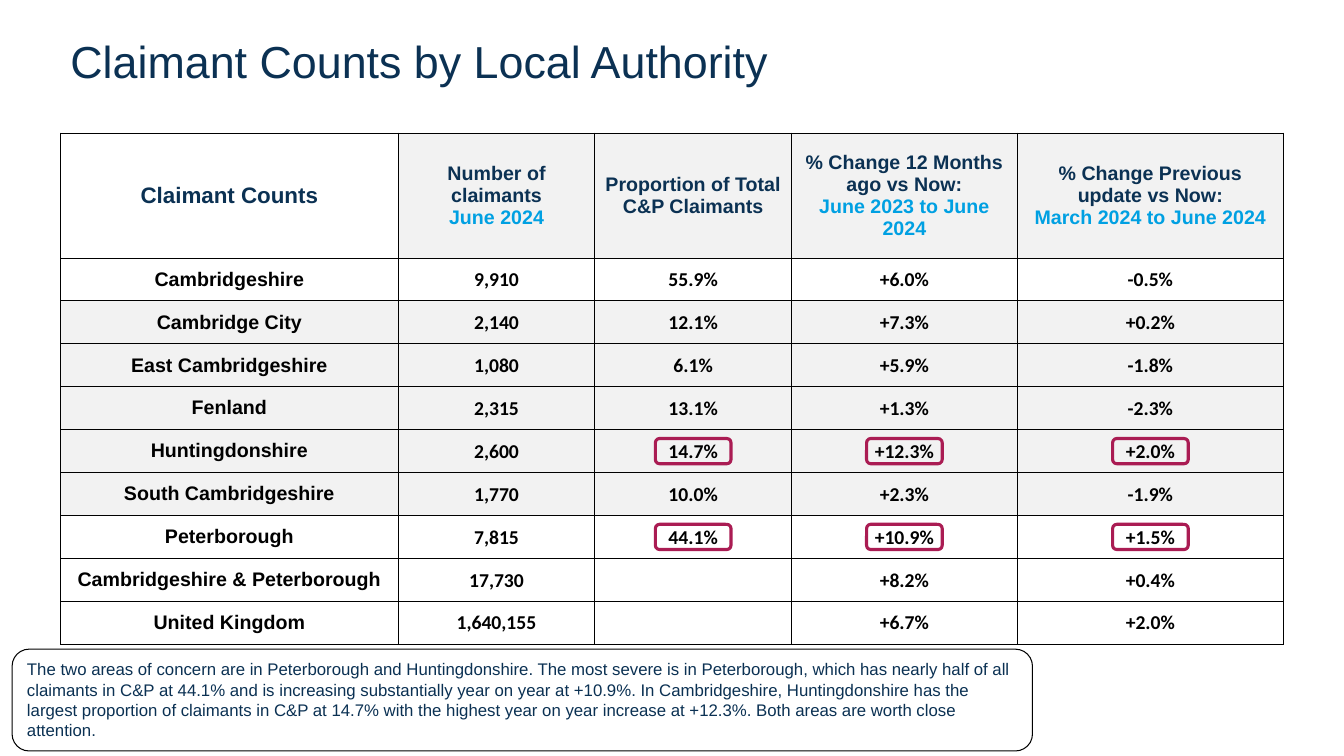
from itertools import product
from typing import NamedTuple

import pptx
import pptx.dml.color
import pptx.enum.shapes
import pptx.enum.text
import pptx.oxml
import pptx.oxml.ns
import pptx.util

COLOURS = {"navy": "0B3153", "sky": "00A0E2", "black": "000000",
           "band": "F2F2F2", "highlight": "AA1C53"}
SLIDE_WIDTH, SLIDE_HEIGHT = 13.33, 7.5
MARGIN, TABLE_TOP = 0.6, 1.32
COLUMNS = [3.35, 1.95, 1.95, 2.24, 2.64]
ROWS = [1.24] + [0.4256] * 9
HIGHLIGHT_WIDTH, HIGHLIGHT_HEIGHT = 0.75, 0.25


class Box(NamedTuple):
    left: float
    top: float
    width: float
    height: float

    def emu(self) -> list[int]:
        return [pptx.util.Inches(length) for length in self]


class Heading(NamedTuple):
    label: str
    period: str = ""
    size: int = 14
    shaded: bool = True


class Area(NamedTuple):
    name: str
    figures: tuple[str, str, str, str]
    is_district: bool = False
    of_concern: bool = False


HEADINGS = [
    Heading("Claimant Counts", size=16, shaded=False),
    Heading("Number of claimants", "June 2024"),
    Heading("Proportion of Total C&P Claimants"),
    Heading("% Change 12 Months ago vs Now:", "June 2023 to June 2024"),
    Heading("% Change Previous update vs Now:", "March 2024 to June 2024"),
]
AREAS = [
    Area("Cambridgeshire", ("9,910", "55.9%", "+6.0%", "-0.5%")),
    Area("Cambridge City", ("2,140", "12.1%", "+7.3%", "+0.2%"), True),
    Area("East Cambridgeshire", ("1,080", "6.1%", "+5.9%", "-1.8%"), True),
    Area("Fenland", ("2,315", "13.1%", "+1.3%", "-2.3%"), True),
    Area("Huntingdonshire", ("2,600", "14.7%", "+12.3%", "+2.0%"), True, True),
    Area("South Cambridgeshire", ("1,770", "10.0%", "+2.3%", "-1.9%"), True),
    Area("Peterborough", ("7,815", "44.1%", "+10.9%", "+1.5%"), of_concern=True),
    Area("Cambridgeshire & Peterborough", ("17,730", "", "+8.2%", "+0.4%")),
    Area("United Kingdom", ("1,640,155", "", "+6.7%", "+2.0%")),
]
SUMMARY = (
    "The two areas of concern are in Peterborough and Huntingdonshire. The most severe "
    "is in Peterborough, which has nearly half of all claimants in C&P at 44.1% and is "
    "increasing substantially year on year at +10.9%. In Cambridgeshire, Huntingdonshire "
    "has the largest proportion of claimants in C&P at 14.7% with the highest year on "
    "year increase at +12.3%. Both areas are worth close attention."
)


def rgb(colour: str) -> pptx.dml.color.RGBColor:
    return pptx.dml.color.RGBColor.from_string(COLOURS[colour])


def add_run(paragraph, text: str, size: int, colour: str,
            font: str = "Arial", bold: bool = False) -> None:
    run = paragraph.add_run()
    run.text = text
    run.font.size = pptx.util.Pt(size)
    run.font.name = font
    run.font.bold = bold
    run.font.color.rgb = rgb(colour)


def style_cell(cell, shaded: bool) -> None:
    """Give a cell thin black borders, middle anchoring and its band fill."""
    cell.vertical_anchor = pptx.enum.text.MSO_ANCHOR.MIDDLE
    properties = cell._tc.get_or_add_tcPr()
    for side in ("lnL", "lnR", "lnT", "lnB"):
        properties.append(pptx.oxml.parse_xml(
            f'<a:{side} {pptx.oxml.ns.nsdecls("a")} w="{pptx.util.Pt(0.75)}"><a:solidFill>'
            f'<a:srgbClr val="{COLOURS["black"]}"/></a:solidFill></a:{side}>'))
    if shaded:
        cell.fill.solid()
        cell.fill.fore_color.rgb = rgb("band")
    else:
        cell.fill.background()


def write_cell(cell, lines: list[tuple[str, str]], size: int = 14,
               font: str = "Arial") -> None:
    """Write (text, colour) lines as bold centred paragraphs."""
    frame = cell.text_frame
    for index, (text, colour) in enumerate(lines):
        paragraph = frame.add_paragraph() if index else frame.paragraphs[0]
        paragraph.alignment = pptx.enum.text.PP_ALIGN.CENTER
        add_run(paragraph, text, size, colour, font, bold=True)


def add_title(slide) -> None:
    box = Box(MARGIN, 0.25, sum(COLUMNS), 0.71)
    frame = slide.shapes.add_textbox(*box.emu()).text_frame
    frame.word_wrap = True
    frame.vertical_anchor = pptx.enum.text.MSO_ANCHOR.MIDDLE
    add_run(frame.paragraphs[0], "Claimant Counts by Local Authority", 32, "navy")


def add_claimant_table(slide) -> None:
    box = Box(MARGIN, TABLE_TOP, sum(COLUMNS), sum(ROWS))
    table = slide.shapes.add_table(len(ROWS), len(COLUMNS), *box.emu()).table
    table.first_row = table.horz_banding = False
    for column, width in zip(table.columns, COLUMNS):
        column.width = pptx.util.Inches(width)
    for row, height in zip(table.rows, ROWS):
        row.height = pptx.util.Inches(height)

    for column, heading in enumerate(HEADINGS):
        cell = table.cell(0, column)
        style_cell(cell, heading.shaded)
        lines = [(heading.label, "navy")]
        if heading.period:
            lines.append((heading.period, "sky"))
        write_cell(cell, lines, heading.size)

    for row, area in enumerate(AREAS, start=1):
        name_cell = table.cell(row, 0)
        style_cell(name_cell, area.is_district)
        write_cell(name_cell, [(area.name, "black")])
        for column, figure in enumerate(area.figures, start=1):
            cell = table.cell(row, column)
            style_cell(cell, area.is_district)
            cell.margin_left = cell.margin_right = cell.margin_top = pptx.util.Inches(0.01)
            cell.margin_bottom = 0
            if figure:
                write_cell(cell, [(figure, "black")], font="Calibri")


def add_rounded_outline(slide, box: Box, colour: str, weight: float):
    outline = slide.shapes.add_shape(
        pptx.enum.shapes.MSO_SHAPE.ROUNDED_RECTANGLE, *box.emu())
    outline.shadow.inherit = False
    outline.fill.background()
    outline.line.color.rgb = rgb(colour)
    outline.line.width = pptx.util.Pt(weight)
    return outline


def add_summary(slide) -> None:
    box = Box(0.12, 6.44, 10.12, 1.01)
    frame = add_rounded_outline(slide, box, "black", 0.75).text_frame
    frame.word_wrap = True
    frame.auto_size = pptx.enum.text.MSO_AUTO_SIZE.SHAPE_TO_FIT_TEXT
    frame.vertical_anchor = pptx.enum.text.MSO_ANCHOR.TOP
    paragraph = frame.paragraphs[0]
    paragraph.alignment = pptx.enum.text.PP_ALIGN.LEFT
    add_run(paragraph, SUMMARY, 12, "navy")


def add_highlights(slide) -> None:
    """Ring the three percentages of each area of concern, centred in their cells."""
    concern_rows = [row for row, area in enumerate(AREAS, start=1) if area.of_concern]
    for column, row in product(range(2, len(COLUMNS)), concern_rows):
        centre_x = MARGIN + sum(COLUMNS[:column]) + COLUMNS[column] / 2
        centre_y = TABLE_TOP + sum(ROWS[:row]) + ROWS[row] / 2
        box = Box(centre_x - HIGHLIGHT_WIDTH / 2, centre_y - HIGHLIGHT_HEIGHT / 2,
                  HIGHLIGHT_WIDTH, HIGHLIGHT_HEIGHT)
        add_rounded_outline(slide, box, "highlight", 2.25)


def main() -> None:
    presentation = pptx.Presentation()
    presentation.slide_width = pptx.util.Inches(SLIDE_WIDTH)
    presentation.slide_height = pptx.util.Inches(SLIDE_HEIGHT)
    slide = presentation.slides.add_slide(presentation.slide_layouts[6])
    add_title(slide)
    add_claimant_table(slide)
    add_summary(slide)
    add_highlights(slide)
    presentation.save("out.pptx")


if __name__ == "__main__":
    main()
